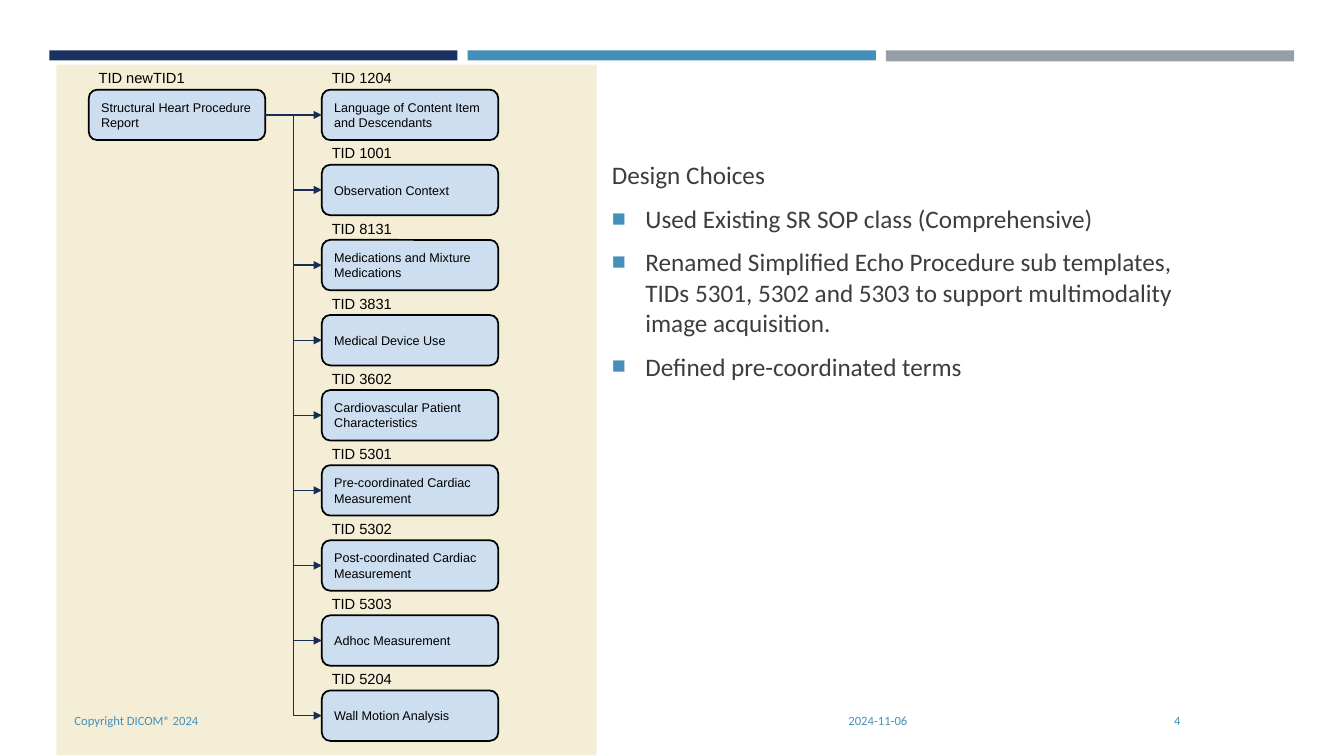
"""Build the slide that charts the structural heart report templates."""
from lxml.etree import SubElement
from pptx import Presentation
from pptx.dml.color import RGBColor
from pptx.enum.shapes import MSO_CONNECTOR as Connector, MSO_SHAPE as Shape
from pptx.enum.text import MSO_ANCHOR as Anchor, MSO_AUTO_SIZE as AutoSize, PP_ALIGN as Align
from pptx.oxml.ns import qn
from pptx.util import Pt

COLOURS = {
    "navy": "1A3260", "blue": "4590B8", "grey": "969FA7", "cream": "F5EED6",
    "box": "CCDEF0", "black": "000000", "arrow": "172D56", "body": "3D3D3D",
}
NODE_FORMAT = {"name": "Arial", "size": Pt(9)}
LABEL_FORMAT = {"name": "Arial", "size": Pt(10.5)}
FOOTER_FORMAT = {"name": "Calibri", "size": Pt(9)}
BODY_FORMAT = {"name": "Calibri", "size": Pt(18)}


def add_panel(kind, left, top, width, height, fill):
    panel = slide.shapes.add_shape(kind, Pt(left), Pt(top), Pt(width), Pt(height))
    panel.shadow.inherit = False
    panel.fill.solid()
    panel.fill.fore_color.rgb = RGBColor.from_string(COLOURS[fill])
    panel.line.fill.background()
    return panel


def write(paragraph, text, text_format, colour):
    paragraph.alignment = Align.LEFT
    run = paragraph.add_run()
    run.text = text
    for name, value in text_format.items():
        setattr(run.font, name, value)
    run.font.color.rgb = RGBColor.from_string(COLOURS[colour])


presentation = Presentation()
presentation.slide_width, presentation.slide_height = Pt(960), Pt(540)
slide = presentation.slides.add_slide(presentation.slide_layouts[1])
title = slide.shapes.title
title.element.getparent().remove(title.element)

for column, (colour, height) in enumerate([("navy", 7.2), ("blue", 7.2), ("grey", 7.8)]):
    add_panel(Shape.RECTANGLE, 35.2 + 298.8 * column, 36, 291.6, height, colour)
add_panel(Shape.RECTANGLE, 40.2, 46.2, 386, 493.3, "cream")

ROOT_LEFT, CHILD_LEFT, FIRST_TOP, ROW_STEP = 63.4, 229.9, 64.1, 53.64
children = [
    ("TID 1204", "Language of Content Item and Descendants"),
    ("TID 1001", "Observation Context"),
    ("TID 8131", "Medications and Mixture Medications"),
    ("TID 3831", "Medical Device Use"),
    ("TID 3602", "Cardiovascular Patient Characteristics"),
    ("TID 5301", "Pre-coordinated Cardiac Measurement"),
    ("TID 5302", "Post-coordinated Cardiac Measurement"),
    ("TID 5303", "Adhoc Measurement"),
    ("TID 5204", "Wall Motion Analysis"),
]
nodes = [(ROOT_LEFT, FIRST_TOP, "TID newTID1", "Structural Heart Procedure Report")]
for row, (label, name) in enumerate(children):
    nodes.append((CHILD_LEFT, FIRST_TOP + ROW_STEP * row, label, name))

text_boxes = []
boxes = []
for left, top, label, name in nodes:
    box = add_panel(Shape.ROUNDED_RECTANGLE, left, top, 126, 36, "box")
    box.line.color.rgb = RGBColor.from_string(COLOURS["black"])
    box.line.width = Pt(1.25)
    box.text_frame.word_wrap = True
    box.text_frame.vertical_anchor = Anchor.MIDDLE
    write(box.text_frame.paragraphs[0], name, NODE_FORMAT, "black")
    boxes.append(box)
    text_boxes.append((left, top - 18.2, 90, 20, label, LABEL_FORMAT, "black"))

root, *child_boxes = boxes
for row, child in enumerate(child_boxes):
    kind = Connector.ELBOW if row else Connector.STRAIGHT
    arrow = slide.shapes.add_connector(kind, 0, 0, 0, 0)
    arrow.begin_connect(root, 3)
    arrow.end_connect(child, 1)
    arrow.line.color.rgb = RGBColor.from_string(COLOURS["arrow"])
    arrow.line.width = Pt(1)
    SubElement(arrow.line._get_or_add_ln(), qn("a:tailEnd"), type="triangle")
    SubElement(arrow.element.spPr, qn("a:effectLst"))

for left, width, text in [
    (46.1, 544.3, "Copyright DICOM® 2024"),
    (599, 223.9, "2024-11-06"),
    (831.6, 82.8, "4"),
]:
    text_boxes.append((left, 505.4, width, 28.8, text, FOOTER_FORMAT, "blue"))

for left, top, width, height, text, text_format, colour in text_boxes:
    text_box = slide.shapes.add_textbox(Pt(left), Pt(top), Pt(width), Pt(height))
    text_box.text_frame.word_wrap = True
    write(text_box.text_frame.paragraphs[0], text, text_format, colour)

body = slide.placeholders[1]
body_place = {"left": Pt(429.8), "top": Pt(110.2), "width": Pt(447.1), "height": Pt(289.4)}
for name, value in body_place.items():
    setattr(body, name, value)
frame = body.text_frame
frame.auto_size = AutoSize.NONE
frame.vertical_anchor = Anchor.TOP
choices = [
    "Design Choices",
    "Used Existing SR SOP class (Comprehensive)",
    "Renamed Simplified Echo Procedure sub templates, TIDs 5301, 5302 and 5303 "
    "to support multimodality image acquisition.",
    "Defined pre-coordinated terms",
]
for number, choice in enumerate(choices):
    paragraph = frame.add_paragraph() if number else frame.paragraphs[0]
    properties = paragraph._p.get_or_add_pPr()
    indent = Pt(24) if number else 0
    properties.set("marL", str(indent))
    properties.set("indent", str(-indent))
    if number:
        bullet_colour = SubElement(properties, qn("a:buClr"))
        SubElement(bullet_colour, qn("a:srgbClr"), val=COLOURS["blue"])
        SubElement(properties, qn("a:buSzPct"), val="92000")
        SubElement(properties, qn("a:buFont"), typeface="Arial")
        SubElement(properties, qn("a:buChar"), char="■")
    else:
        SubElement(properties, qn("a:buNone"))
    paragraph.space_before = Pt(3.6 if number else 0)
    paragraph.space_after = Pt(6)
    write(paragraph, choice, BODY_FORMAT, "body")

presentation.save("out.pptx")
